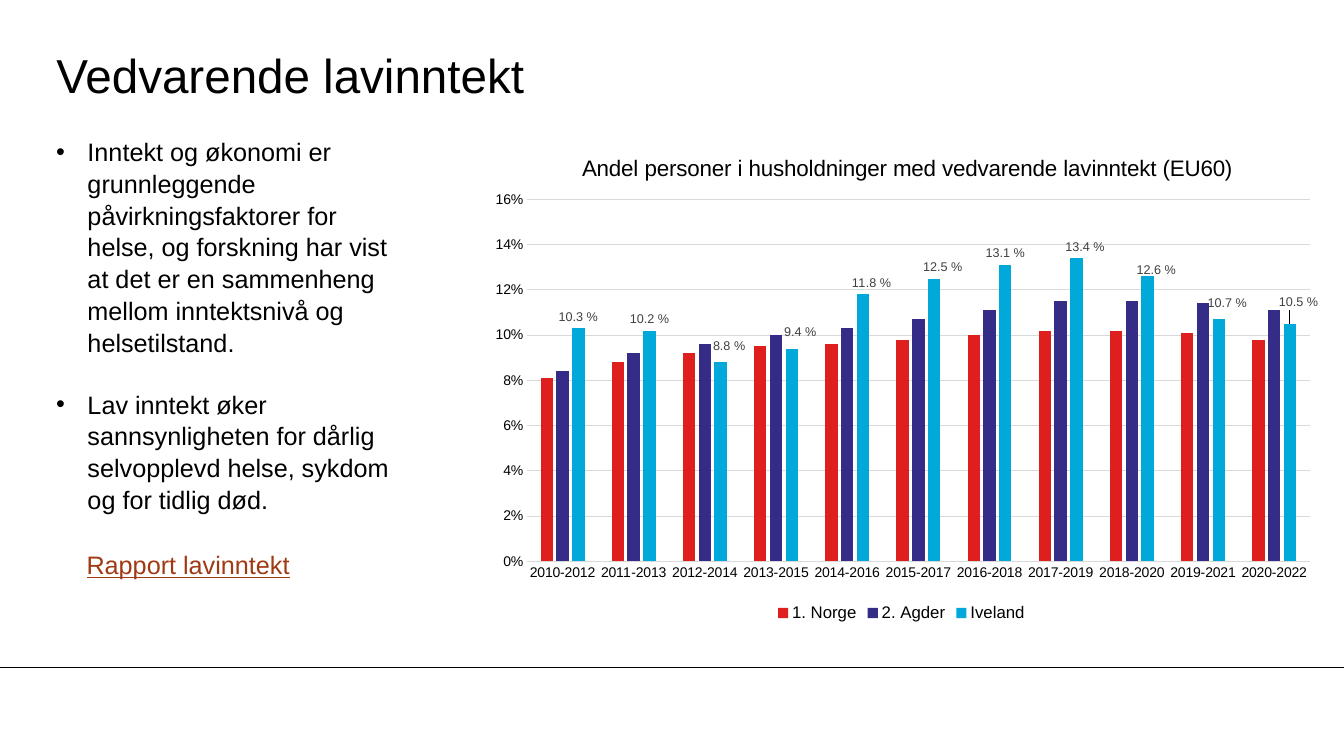
from lxml import etree
from pptx import Presentation
from pptx.chart.data import CategoryChartData
from pptx.dml.color import RGBColor
from pptx.enum.chart import (XL_CHART_TYPE, XL_LABEL_POSITION, XL_LEGEND_POSITION,
                             XL_TICK_MARK)
from pptx.enum.shapes import MSO_CONNECTOR
from pptx.enum.text import MSO_ANCHOR
from pptx.oxml.ns import qn
from pptx.util import Inches, Pt

COLUMNS = XL_CHART_TYPE.COLUMN_CLUSTERED
OUTSIDE = XL_LABEL_POSITION.OUTSIDE_END
BOTTOM = XL_LEGEND_POSITION.BOTTOM
NO_TICK = XL_TICK_MARK.NONE
STRAIGHT = MSO_CONNECTOR.STRAIGHT
TOP, MIDDLE = MSO_ANCHOR.TOP, MSO_ANCHOR.MIDDLE
FONT = "Arial"
LABEL_FORMAT = "0.0\\ %"
COLORS = {"text": "000000", "link": "9F3A14", "grid": "D9D9D9", "label": "404040",
          "norge": "DF1F1D", "agder": "342C86", "iveland": "00A9DA"}

POINTS = [
    "Inntekt og økonomi er grunnleggende påvirkningsfaktorer for helse, og forskning "
    "har vist at det er en sammenheng mellom inntektsnivå og helsetilstand.",
    "Lav inntekt øker sannsynligheten for dårlig selvopplevd helse, sykdom og for "
    "tidlig død.",
]
PERIODS = [f"{year}-{year + 2}" for year in range(2010, 2021)]
SHARES = [
    ("1. Norge", "norge", [0.081, 0.088, 0.092, 0.095, 0.096, 0.098, 0.1, 0.102, 0.102,
                           0.101, 0.098]),
    ("2. Agder", "agder", [0.084, 0.092, 0.096, 0.1, 0.103, 0.107, 0.111, 0.115, 0.115,
                           0.114, 0.111]),
    ("Iveland", "iveland", [0.103, 0.102, 0.088, 0.094, 0.118, 0.125, 0.131, 0.134,
                            0.126, 0.107, 0.105]),
]
LABEL_SHIFTS = {2: (0.01, -0.01), 3: (0.01, -0.01), 4: (0.01, 0), 5: (0.01, 0),
                7: (0.01, 0), 8: (0.01, 0.01), 9: (0.01, -0.01), 10: (0.01, -0.02)}


def rgb(name):
    """Return the named colour."""
    return RGBColor.from_string(COLORS[name])


def style_font(font, size, color="text"):
    """Set face, size and colour of a font."""
    font.name, font.size, font.bold = FONT, Pt(size), False
    font.color.rgb = rgb(color)


def add_bullet(paragraph):
    """Give a paragraph a hanging round bullet."""
    properties = paragraph._p.get_or_add_pPr()
    properties.set("marL", str(Inches(0.31)))
    properties.set("indent", str(-Inches(0.31)))
    etree.SubElement(properties, qn("a:buFont"), typeface=FONT)
    etree.SubElement(properties, qn("a:buChar"), char="•")


def add_text(slide, paragraphs, place, size=18, color="text", bullets=False,
             underline=False, anchor=TOP, inset=None, spacing=None, gap=0):
    """Add a wrapped text box with one format for all its paragraphs."""
    frame = slide.shapes.add_textbox(*map(Inches, place)).text_frame
    frame.word_wrap, frame.vertical_anchor = True, anchor
    if inset is not None:
        frame.margin_left = frame.margin_right = Inches(inset)
        frame.margin_top = frame.margin_bottom = Inches(inset)
    for index, text in enumerate(paragraphs):
        paragraph = frame.paragraphs[0] if index == 0 else frame.add_paragraph()
        if bullets:
            add_bullet(paragraph)
        if spacing:
            paragraph.line_spacing = spacing
        if index:
            paragraph.space_before = Pt(gap)
        run = paragraph.add_run()
        run.text = text
        style_font(run.font, size, color)
        run.font.underline = underline


def add_rule(slide, y):
    """Draw a thin line across the whole slide."""
    rule = slide.shapes.add_connector(STRAIGHT, 0, Inches(y), Inches(13.33), Inches(y))
    rule.line.color.rgb, rule.line.width = rgb("text"), Pt(0.75)
    etree.SubElement(rule._element.spPr, qn("a:effectLst"))


def make_layout(modes=(), **sizes):
    """Build a manual chart layout from fractions of the chart."""
    layout = etree.Element(qn("c:layout"))
    manual = etree.SubElement(layout, qn("c:manualLayout"))
    for tag, value in [*modes, *sizes.items()]:
        etree.SubElement(manual, qn(f"c:{tag}"), val=str(value))
    return layout


def place_part(part, layout, before):
    """Put a layout into a chart part ahead of the named children."""
    for old in part.findall(qn("c:layout")):
        part.remove(old)
    next(child for child in part if child.tag in map(qn, before)).addprevious(layout)


def style_axes(chart):
    """Format the period axis and the percentage axis."""
    periods, percent = chart.category_axis, chart.value_axis
    for axis in (periods, percent):
        axis.major_tick_mark = axis.minor_tick_mark = NO_TICK
        style_font(axis.tick_labels.font, 10)
    percent.minimum_scale, percent.maximum_scale, percent.major_unit = 0, 0.16, 0.02
    percent.tick_labels.number_format = "0%"
    percent.tick_labels.number_format_is_linked = False
    percent.format.line.fill.background()
    for line in (periods.format.line, percent.major_gridlines.format.line):
        line.color.rgb, line.width = rgb("grid"), Pt(0.75)


def label_series(series):
    """Show the values of a series, some of them shifted."""
    labels = series.data_labels
    labels.show_value, labels.position = True, OUTSIDE
    labels.number_format, labels.number_format_is_linked = LABEL_FORMAT, False
    style_font(labels.font, 9, "label")
    for index, (x, y) in LABEL_SHIFTS.items():
        label = series.points[index].data_label
        style_font(label.font, 9, "label")
        label.position = OUTSIDE
        number = labels._element.find(qn(f"c:dLbl[{len(labels._element.findall(qn('c:dLbl')))}]")
                                      .replace("[", "[", 1) + "/" + qn("c:idx"))
        layout = make_layout(x=x, y=y)
        number.addnext(layout)
        layout.addnext(etree.Element(qn("c:numFmt"), formatCode=LABEL_FORMAT,
                                     sourceLinked="0"))


def add_share_chart(slide, title, place):
    """Add the column chart of low-income shares."""
    data = CategoryChartData(number_format="0.0%")
    data.categories = PERIODS
    for name, _, values in SHARES:
        data.add_series(name, values)
    chart = slide.shapes.add_chart(COLUMNS, *map(Inches, place), data).chart
    style_font(chart.font, 10)
    chart.has_title = True
    heading = chart.chart_title.text_frame.paragraphs[0].add_run()
    heading.text = title
    style_font(heading.font, 16)
    edges = [("xMode", "edge"), ("yMode", "edge")]
    place_part(chart.chart_title._element, make_layout(edges, x=0.12, y=0.04),
               ["c:overlay"])
    place_part(chart._chartSpace.chart.plotArea,
               make_layout([("layoutTarget", "inner"), *edges],
                           x=0.06, y=0.14, w=0.92, h=0.73), ["c:barChart"])
    chart.has_legend = True
    chart.legend.position, chart.legend.include_in_layout = BOTTOM, False
    style_font(chart.legend.font, 12)
    style_axes(chart)
    plot = chart.plots[0]
    plot.gap_width, plot.overlap, plot.vary_by_categories = 219, -27, False
    for series, (_, color, _) in zip(plot.series, SHARES):
        series.format.fill.solid()
        series.format.fill.fore_color.rgb = rgb(color)
    label_series(plot.series[-1])


def main():
    """Build the slide and save it."""
    deck = Presentation()
    deck.slide_width, deck.slide_height = Inches(13.33), Inches(7.5)
    slide = deck.slides.add_slide(deck.slide_layouts[6])
    add_rule(slide, 6.62)
    add_text(slide, ["Vedvarende lavinntekt"], (0.56, 0.36, 11.1, 0.75), size=34,
             anchor=MIDDLE, inset=0)
    add_text(slide, POINTS, (0.46, 1.29, 3.5, 3.74), bullets=True, spacing=1.05, gap=21.6)
    add_text(slide, ["Rapport lavinntekt"], (0.76, 5.4, 2.65, 0.4), color="link",
             underline=True)
    add_share_chart(slide, "Andel personer i husholdninger med vedvarende lavinntekt (EU60)",
                    (4.72, 1.29, 8.44, 4.92))
    deck.save("out.pptx")


if __name__ == "__main__":
    main()
